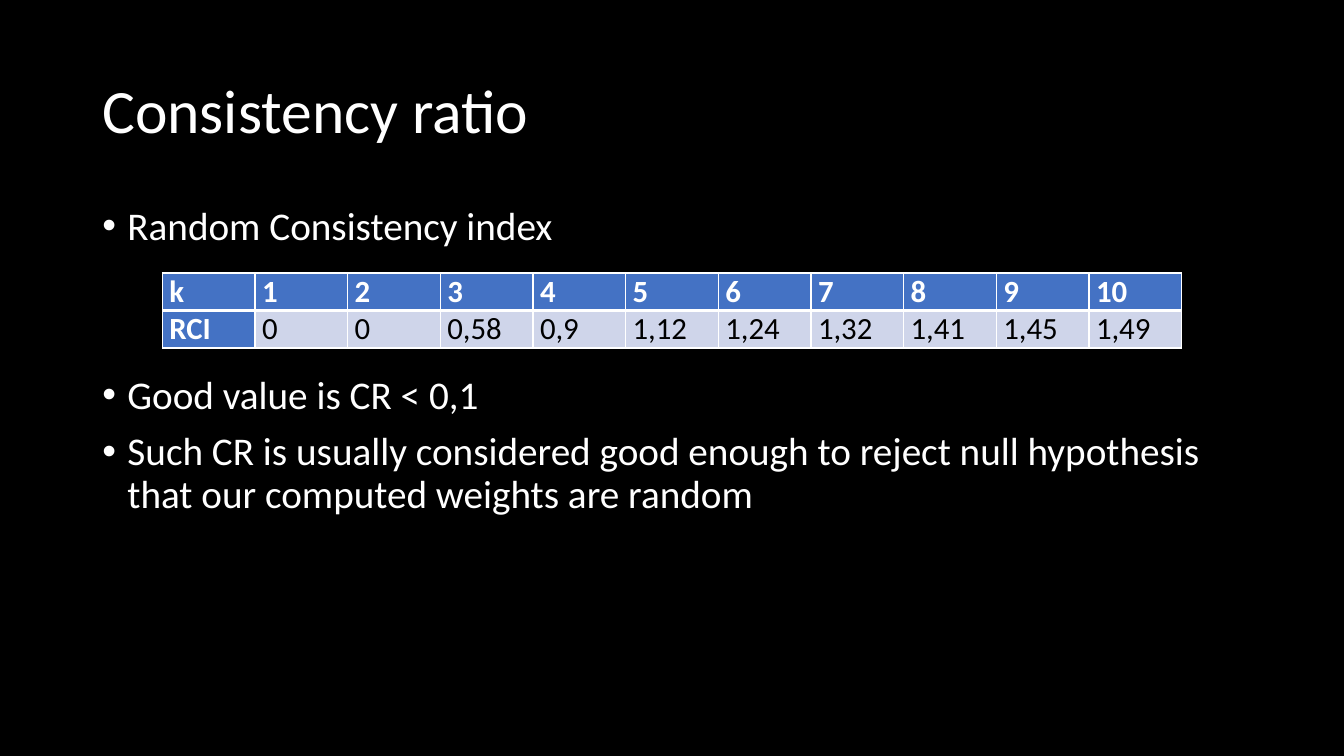
"""Build the consistency ratio slide."""
from dataclasses import dataclass

from lxml.etree import SubElement
from pptx import Presentation
from pptx.dml.color import RGBColor
from pptx.enum.text import MSO_ANCHOR
from pptx.oxml import parse_xml
from pptx.oxml.ns import nsdecls, qn
from pptx.util import Pt

FACE = "Calibri"
WHITE, BLACK, BLUE, PALE = "FFFFFF", "000000", "4472C4", "CFD5EA"
LEFT, WIDE = 66, 828
INDENT = 18
COL, ROW = 66.2, 26.8
THIN, THICK = 1, 3


@dataclass
class Line:
    text: str
    size: float = 28
    before: float = 10
    bullet: bool = True


@dataclass
class Box:
    top: float
    high: float
    anchor: MSO_ANCHOR
    lines: list[Line]


BOXES = [
    Box(28.75, 104.4, MSO_ANCHOR.MIDDLE,
        [Line("Consistency ratio", 44, 0, False)]),
    Box(144, 342.7, MSO_ANCHOR.TOP, [
        Line("Random Consistency index"),
        Line("Good value is CR < 0,1", before=90.5),
        Line("Such CR is usually considered good enough to reject null "
             "hypothesis that our computed weights are random"),
    ]),
]
GRID = [
    ["k", *map(str, range(1, 11))],
    ["RCI", "0", "0", "0,58", "0,9", "1,12", "1,24", "1,32", "1,41", "1,45",
     "1,49"],
]


def color(code: str) -> RGBColor:
    return RGBColor.from_string(code)


def style(para, size: float, code: str, bold: bool = False) -> None:
    font = para.font
    font.name, font.size, font.bold = FACE, Pt(size), bold
    font.color.rgb = color(code)


def add_bullet(para) -> None:
    props = para._p.get_or_add_pPr()
    props.set("marL", str(Pt(INDENT)))
    props.set("indent", str(-Pt(INDENT)))
    SubElement(props, qn("a:buFont"), typeface="Arial")
    SubElement(props, qn("a:buChar"), char="•")


def draw_box(slide, box: Box) -> None:
    shape = slide.shapes.add_textbox(Pt(LEFT), Pt(box.top), Pt(WIDE),
                                     Pt(box.high))
    frame = shape.text_frame
    frame.word_wrap = True
    frame.vertical_anchor = box.anchor
    for num, line in enumerate(box.lines):
        para = frame.add_paragraph() if num else frame.paragraphs[0]
        para.text = line.text
        para.line_spacing = 0.9
        para.space_before = Pt(line.before)
        if line.bullet:
            add_bullet(para)
        style(para, line.size, WHITE)


def add_edges(cell, top: float, base: float) -> None:
    props = cell._tc.get_or_add_tcPr()
    edges = {"lnL": THIN, "lnR": THIN, "lnT": top, "lnB": base}
    for spot, (tag, width) in enumerate(edges.items()):
        props.insert(spot, parse_xml(
            f'<a:{tag} {nsdecls("a")} w="{Pt(width)}"><a:solidFill>'
            f'<a:srgbClr val="{WHITE}"/></a:solidFill></a:{tag}>'))


def draw_cell(cell, text: str, head: bool, top: float, base: float) -> None:
    cell.margin_left = cell.margin_right = Pt(5)
    cell.margin_top = cell.margin_bottom = 0
    cell.fill.solid()
    cell.fill.fore_color.rgb = color(BLUE if head else PALE)
    add_edges(cell, top, base)
    para = cell.text_frame.paragraphs[0]
    para.text = text
    style(para, 22, WHITE if head else BLACK, head)


def draw_table(slide, grid: list[list[str]]) -> None:
    rows, cols = len(grid), len(grid[0])
    table = slide.shapes.add_table(rows, cols, Pt(116), Pt(195), Pt(cols * COL),
                                   Pt(rows * ROW)).table
    table.first_col = True
    for col in table.columns:
        col.width = Pt(COL)
    for y, row in enumerate(grid):
        table.rows[y].height = Pt(ROW)
        top = THICK if y == 1 else THIN
        base = THICK if y == 0 else THIN
        for x, text in enumerate(row):
            draw_cell(table.cell(y, x), text, x == 0 or y == 0, top, base)


def main() -> None:
    deck = Presentation()
    deck.slide_width, deck.slide_height = Pt(960), Pt(540)
    slide = deck.slides.add_slide(deck.slide_layouts[6])
    fill = slide.background.fill
    fill.solid()
    fill.fore_color.rgb = color(BLACK)
    for box in BOXES:
        draw_box(slide, box)
    draw_table(slide, GRID)
    deck.save("out.pptx")


if __name__ == "__main__":
    main()
